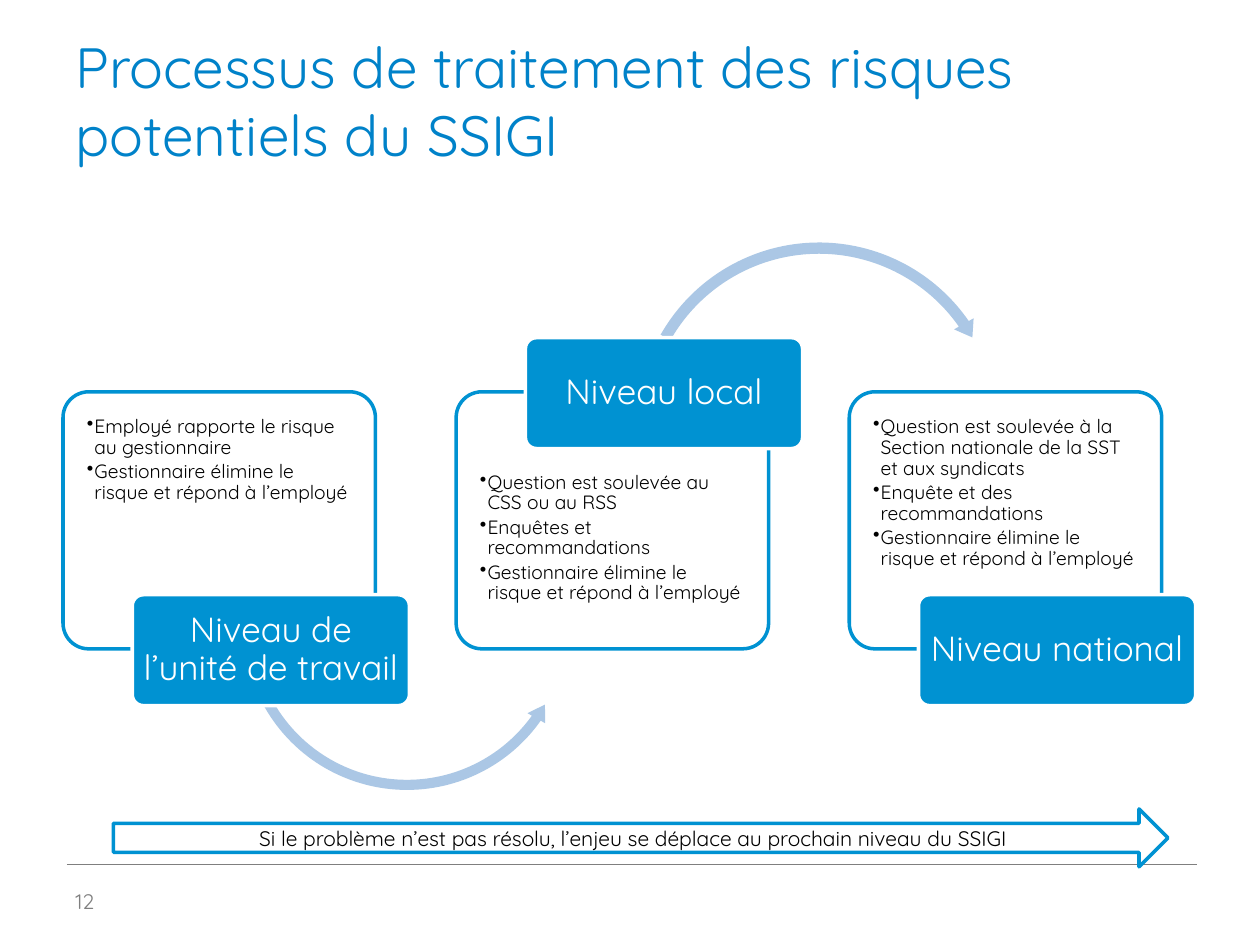
from lxml.etree import SubElement
from pptx import Presentation
from pptx.dml.color import RGBColor
from pptx.enum.shapes import MSO_CONNECTOR, MSO_SHAPE
from pptx.enum.text import MSO_ANCHOR, PP_ALIGN
from pptx.oxml.ns import qn
from pptx.util import Inches, Pt

presentation = Presentation()
presentation.slide_width, presentation.slide_height = Inches(10), Inches(7.5)
slide = presentation.slides.add_slide(presentation.slide_layouts[5])

# Grid of 100 columns by 75 rows
COLUMN = presentation.slide_width / 100
ROW = presentation.slide_height / 75
BLUE, PALE_BLUE, GREY = "0092D2", "ABC7E5", "7F7F7F"
WHITE, BLACK = "FFFFFF", "000000"


def add_box(kind, left, top, width, height, fill, line=None):
    """Add a preset shape placed in grid units, outlined only if a line colour is given."""
    shape = slide.shapes.add_shape(kind, round(left * COLUMN), round(top * ROW),
                                   round(width * COLUMN), round(height * ROW))
    shape.shadow.inherit = False
    shape.fill.solid()
    shape.fill.fore_color.rgb = RGBColor.from_string(fill)
    if line:
        shape.line.color.rgb = RGBColor.from_string(line)
        shape.line.width = Pt(2)
    else:
        shape.line.fill.background()
    return shape


def write(shape, text, size, color, align=PP_ALIGN.CENTER, anchor=MSO_ANCHOR.MIDDLE):
    frame = shape.text_frame
    frame.text = text
    frame.word_wrap = True
    frame.vertical_anchor = anchor
    for paragraph in frame.paragraphs:
        paragraph.alignment = align
        for run in paragraph.runs:
            run.font.size = Pt(size)
            run.font.name = "Quicksand"
            run.font.color.rgb = RGBColor.from_string(color)
    return frame


rule = slide.shapes.add_connector(MSO_CONNECTOR.STRAIGHT, round(5.3 * COLUMN), round(68.6 * ROW),
                                  round(95 * COLUMN), round(68.6 * ROW))
rule.line.color.rgb = RGBColor.from_string(GREY)
rule.line.width = Pt(0.25)
SubElement(rule._element.spPr, qn("a:effectLst"))

title = slide.shapes.title
title.left, title.top = round(5 * COLUMN), round(3 * ROW)
title.width, title.height = round(90 * COLUMN), round(10.8 * ROW)
write(title, "Processus de traitement des risques potentiels du SSIGI", 32.4, "0082C9",
      PP_ALIGN.LEFT, MSO_ANCHOR.BOTTOM)

# Each level: label, label row, top inset of the steps, steps, arrow to the next level
levels = [
    ("Niveau de l’unité de travail", 47.2, 0.14,
     ["Employé rapporte le risque au gestionnaire",
      "Gestionnaire élimine le risque et répond à l’employé"],
     (MSO_SHAPE.LEFT_CIRCULAR_ARROW, 18.9, 36.3, 26.8, (0.03, 3.5, 21.26, 90.25, 0.03))),
    ("Niveau local", 26.8, 0.58,
     ["Question est soulevée au CSS ou au RSS",
      "Enquêtes et recommandations",
      "Gestionnaire élimine le risque et répond à l’employé"],
     (MSO_SHAPE.CIRCULAR_ARROW, 50.1, 18.8, 29.8, (0.03, 3.13, 195.11, 125.75, 0.03))),
    ("Niveau national", 47.2, 0.14,
     ["Question est soulevée à la Section nationale de la SST et aux syndicats",
      "Enquête et des recommandations",
      "Gestionnaire élimine le risque et répond à l’employé"],
     None),
]

for index, (label, label_top, inset_top, steps, arrow) in enumerate(levels):
    left = 5 + 31.2 * index

    card = add_box(MSO_SHAPE.ROUNDED_RECTANGLE, left, 31.1, 24.8, 20.4, WHITE, BLUE)
    card.adjustments[0] = 0.1
    frame = write(card, "\n".join(steps), 11, BLACK, PP_ALIGN.LEFT, MSO_ANCHOR.TOP)
    frame.margin_left = frame.margin_right = Inches(0.13)
    frame.margin_top = Inches(inset_top)
    for paragraph in frame.paragraphs:
        paragraph.line_spacing = 0.9
        paragraph.space_after = Pt(2)
        properties = paragraph._p.get_or_add_pPr()
        properties.set("marL", str(Inches(0.06)))
        properties.set("indent", str(-Inches(0.06)))
        SubElement(properties, qn("a:buChar"), char="•")

    if arrow:
        kind, arrow_left, arrow_top, side, adjustments = arrow
        curve = add_box(kind, arrow_left, arrow_top, side, side, PALE_BLUE)
        for position, value in enumerate(adjustments):
            curve.adjustments[position] = value

    tag = add_box(MSO_SHAPE.ROUNDED_RECTANGLE, left + 5.5, label_top, 22, 8.8, BLUE, WHITE)
    tag.adjustments[0] = 0.1
    frame = write(tag, label, 20, WHITE)
    frame.margin_left = frame.margin_right = Inches(0.04)
    frame.margin_top = frame.margin_bottom = Inches(0.03)
    frame.paragraphs[0].line_spacing = 0.9

number = slide.shapes.add_textbox(round(5 * COLUMN), round(69.5 * ROW),
                                  round(10.7 * COLUMN), round(4 * ROW))
write(number, "12", 12, GREY, PP_ALIGN.LEFT)

escalation = add_box(MSO_SHAPE.RIGHT_ARROW, 9, 64.2, 83.7, 4.6, WHITE, BLUE)
frame = write(escalation,
              "Si le problème n’est pas résolu, l’enjeu se déplace au prochain niveau du SSIGI",
              12, BLACK)
frame.margin_top = frame.margin_bottom = 0

presentation.save("out.pptx")
